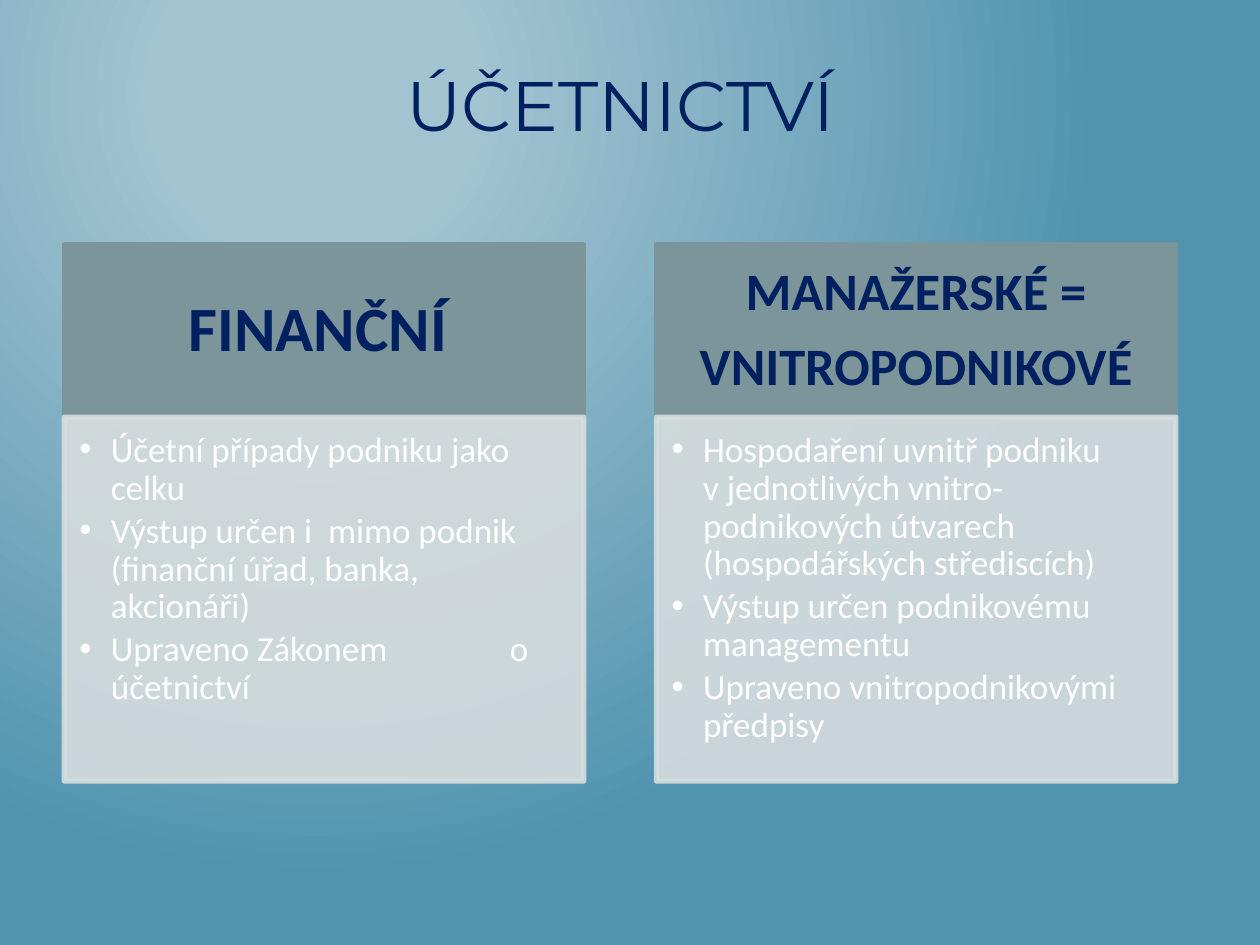
from lxml import etree
from pptx import Presentation
from pptx.dml.color import RGBColor
from pptx.enum.shapes import MSO_SHAPE
from pptx.enum.text import MSO_ANCHOR, PP_ALIGN
from pptx.oxml.ns import qn
from pptx.util import Pt

RECTANGLE = MSO_SHAPE.RECTANGLE
TOP, MIDDLE = MSO_ANCHOR.TOP, MSO_ANCHOR.MIDDLE
LEFT, CENTER = PP_ALIGN.LEFT, PP_ALIGN.CENTER

COLORS = {"navy": "002060", "white": "FFFFFF", "header": "7C959A",
          "body": "D7DDDE", "glow": "A3C3D1", "background": "5194AF"}

TITLE = "ÚČETNICTVÍ"
COLUMNS = [
    {"heading": ["FINANČNÍ"], "size": 36, "margins": (17, 11, 24, 11),
     "points": ["Účetní případy podniku jako celku",
                "Výstup určen i  mimo podnik (finanční úřad, banka, akcionáři)",
                "Upraveno Zákonem\to účetnictví"]},
    {"heading": ["MANAŽERSKÉ =", "VNITROPODNIKOVÉ"], "size": 30,
     "margins": (16, 9, 16, 9),
     "points": ["Hospodaření uvnitř podniku\vv jednotlivých vnitro-podnikových "
                "útvarech (hospodářských střediscích)",
                "Výstup určen podnikovému managementu",
                "Upraveno vnitropodnikovými předpisy"]},
]

COLUMN_LEFT, COLUMN_STEP, COLUMN_WIDTH = 36.8, 338.4, 296.8
HEADER_TOP, HEADER_HEIGHT, BODY_HEIGHT = 139.6, 98.8, 208
BODY_MARGINS = (8.6, 8.6, 11.5, 12.2)
BODY_SIZE, BULLET_INDENT, TAB_POSITION = 20, 18, 246
BODY_OPACITY = 90


def add_child(parent, tag, **attributes):
    return etree.SubElement(parent, qn(tag), attributes)


def set_background(slide):
    """Fill the background with a circular glow at the upper left."""
    fill = slide.background.fill
    fill.gradient()
    stops = fill.gradient_stops
    for stop, position, name in zip(stops, (0.2, 1), ("glow", "background")):
        stop.position = position
        stop.color.rgb = RGBColor.from_string(COLORS[name])
    gradient = slide.background._cSld.find(".//" + qn("a:gradFill"))
    for linear in gradient.findall(qn("a:lin")):
        gradient.remove(linear)
    circle = etree.Element(qn("a:path"), {"path": "circle"})
    add_child(circle, "a:fillToRect", l="50000", t="20000", r="100000", b="100000")
    gradient.find(qn("a:gsLst")).addnext(circle)


def write_text(shape, lines, margins, anchor, align, font, spacing, after):
    frame = shape.text_frame
    sides = ("margin_left", "margin_top", "margin_right", "margin_bottom")
    settings = dict(zip(sides, map(Pt, margins)), word_wrap=True, vertical_anchor=anchor)
    for name, value in settings.items():
        setattr(frame, name, value)
    for index, line in enumerate(lines):
        paragraph = frame.paragraphs[0] if index == 0 else frame.add_paragraph()
        paragraph.text = line
        paragraph.alignment = align
        paragraph.line_spacing = spacing
        paragraph.space_after = Pt(after)
        for run in paragraph.runs:
            run.font.color.rgb = RGBColor.from_string(COLORS[font["color"]])
            for name in ("name", "size", "bold"):
                setattr(run.font, name, font[name])
    return frame.paragraphs


def make_font(name, size, color, bold=False):
    return {"name": name, "size": Pt(size), "color": color, "bold": bold}


def add_panel(slide, left, top, height, color, opacity=100):
    shape = slide.shapes.add_shape(
        RECTANGLE, Pt(left), Pt(top), Pt(COLUMN_WIDTH), Pt(height))
    shape.shadow.inherit = False
    shape.fill.solid()
    shape.line.width = Pt(3)
    for target in (shape.fill.fore_color, shape.line.color):
        target.rgb = RGBColor.from_string(COLORS[color])
    if opacity < 100:
        for rgb in shape._element.spPr.iter(qn("a:srgbClr")):
            add_child(rgb, "a:alpha", val=str(opacity * 1000))
    return shape


def add_bullet(paragraph):
    properties = paragraph._p.get_or_add_pPr()
    indent = Pt(BULLET_INDENT)
    properties.set("marL", str(indent))
    properties.set("indent", str(-indent))
    add_child(properties, "a:buFont", typeface="Arial")
    add_child(properties, "a:buChar", char="•")
    if "\t" in paragraph.text:
        tabs = add_child(properties, "a:tabLst")
        add_child(tabs, "a:tab", pos=str(Pt(TAB_POSITION)), algn="l")


def add_column(slide, left, column):
    header = add_panel(slide, left, HEADER_TOP, HEADER_HEIGHT, "header")
    size = column["size"]
    write_text(header, column["heading"], column["margins"], MIDDLE, CENTER,
               make_font("Calibri", size, "navy", True), 0.9, size * 0.35)
    body = add_panel(slide, left, HEADER_TOP + HEADER_HEIGHT, BODY_HEIGHT,
                     "body", BODY_OPACITY)
    for paragraph in write_text(body, column["points"], BODY_MARGINS, TOP, LEFT,
                                make_font("Calibri", BODY_SIZE, "white"),
                                0.9, BODY_SIZE * 0.15):
        add_bullet(paragraph)


def main():
    presentation = Presentation()
    presentation.slide_width, presentation.slide_height = Pt(720), Pt(540)
    slide = presentation.slides.add_slide(presentation.slide_layouts[6])
    set_background(slide)
    for index, column in enumerate(COLUMNS):
        add_column(slide, COLUMN_LEFT + index * COLUMN_STEP, column)
    title = slide.shapes.add_textbox(Pt(48.2), Pt(31.7), Pt(612.7), Pt(79.2))
    write_text(title, [TITLE], (7.2, 3.6, 7.2, 3.6), TOP, CENTER,
               make_font("Montserrat", 40, "navy"), 1.0, 0)
    presentation.save("out.pptx")


if __name__ == "__main__":
    main()
